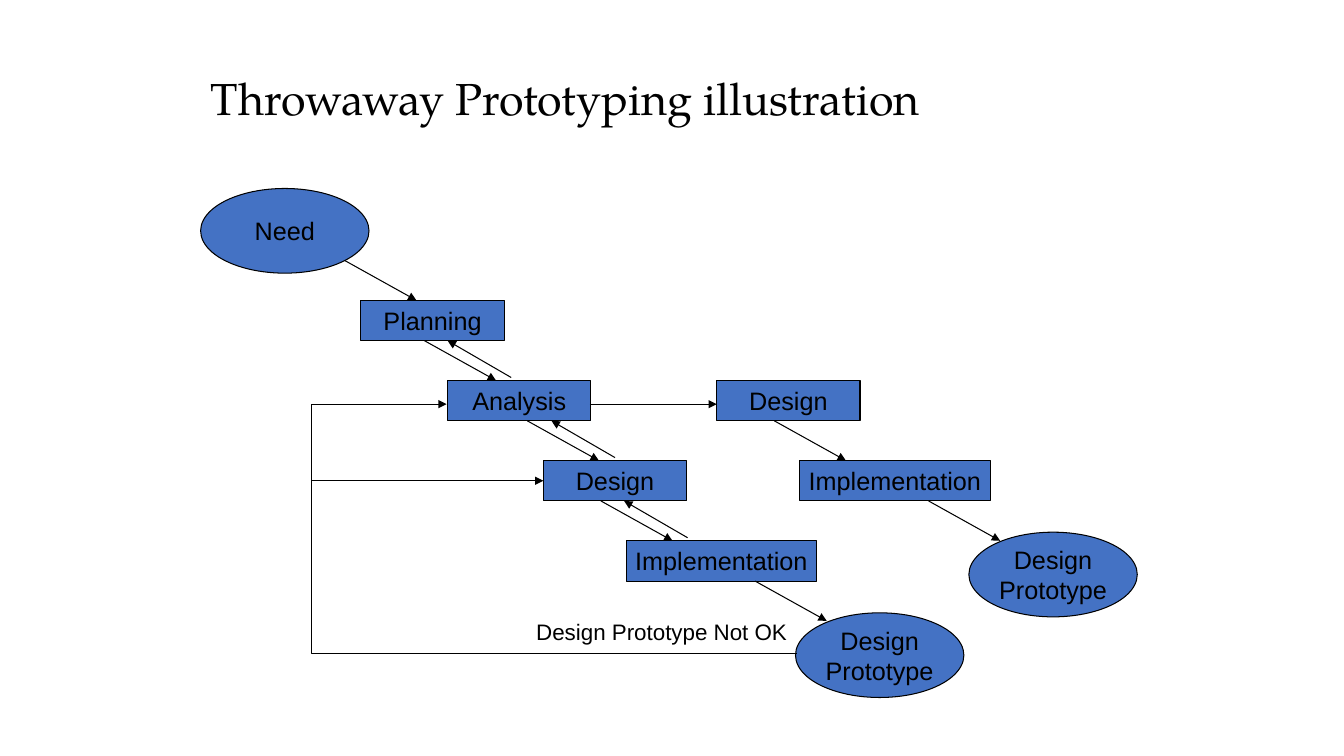
"""Builds the throwaway prototyping slide: two staircases of phases with a feedback loop."""
from lxml import etree
from pptx import Presentation
from pptx.dml.color import RGBColor
from pptx.enum import shapes, text
from pptx.oxml import ns
from pptx.util import Inches, Pt

COLOURS = {"ink": "000000", "phase": "4472C4"}
TITLE = "Throwaway Prototyping illustration"
FEEDBACK = "Design Prototype Not OK"

# label, left, row, width
PHASES = [
    ("Planning", 3.58, 0, 1.42),
    ("Analysis", 4.44, 1, 1.42),
    ("Design", 5.39, 2, 1.42),
    ("Implementation", 6.21, 3, 1.89),
    ("Design", 7.11, 1, 1.42),
    ("Implementation", 7.93, 2, 1.89),
]
# label, left, top
ENDS = [
    ("Need", 1.99, 1.87),
    ("Design\nPrototype", 7.89, 6.08),
    ("Design\nPrototype", 9.61, 5.28),
]
# left end, row above the arrow
STEPS_DOWN = [(3.42, -1), (4.21, 0), (5.23, 1), (5.96, 2), (7.49, 3), (7.68, 1), (9.21, 2)]
STEPS_BACK = [(4.44, 0), (5.47, 1), (6.19, 2)]
LOOP = [(7.9, 6.48), (3.09, 6.48), (3.09, 4.01), (4.43, 4.01)]

FIRST_TOP, ROW_PITCH, PHASE_HEIGHT = 2.98, 0.795, 0.4
END_WIDTH, END_HEIGHT = 1.67, 0.84


def ink(name):
    return RGBColor.from_string(COLOURS[name])


def row_top(row):
    return FIRST_TOP + row * ROW_PITCH


def row_bottom(row):
    return row_top(row) + PHASE_HEIGHT


def write(part, words, size, font, align, **frame_format):
    frame = part.text_frame
    frame.text = words
    for key, value in frame_format.items():
        setattr(frame, key, value)
    for paragraph in frame.paragraphs:
        paragraph.alignment = align
        for key, value in {"size": Pt(size), "name": font}.items():
            setattr(paragraph.font, key, value)
        paragraph.font.color.rgb = ink("ink")


def outline(part, arrow=False):
    part.line.color.rgb = ink("ink")
    part.line.width = Pt(0.75)
    if arrow:
        etree.SubElement(part.line._get_or_add_ln(), ns.qn("a:tailEnd"), type="triangle")


def add_node(slide, kind, label, *box):
    node = slide.shapes.add_shape(kind, *map(Inches, box))
    node.shadow.inherit = False
    node.fill.solid()
    node.fill.fore_color.rgb = ink("phase")
    outline(node)
    write(node, label, 18, "Arial", text.PP_ALIGN.CENTER,
          word_wrap=False, vertical_anchor=text.MSO_ANCHOR.MIDDLE)
    return node


def add_arrow(slide, *ends):
    arrow = slide.shapes.add_connector(shapes.MSO_CONNECTOR.STRAIGHT, *map(Inches, ends))
    outline(arrow, arrow=True)
    etree.SubElement(arrow._element.spPr, ns.qn("a:effectLst"))
    return arrow


def main():
    deck = Presentation()
    deck.slide_width, deck.slide_height = Inches(13.33), Inches(7.5)
    slide = deck.slides.add_slide(deck.slide_layouts[5])

    title = slide.shapes.title
    for key, value in {"left": 1.99, "top": 0.68, "width": 9.29, "height": 0.65}.items():
        setattr(title, key, Inches(value))
    write(title, TITLE, 32, "TeX Gyre Pagella", text.PP_ALIGN.LEFT, word_wrap=True,
          vertical_anchor=text.MSO_ANCHOR.MIDDLE, auto_size=text.MSO_AUTO_SIZE.NONE)
    title.text_frame.paragraphs[0].line_spacing = 0.9

    for label, left, top in ENDS:
        add_node(slide, shapes.MSO_SHAPE.OVAL, label, left, top, END_WIDTH, END_HEIGHT)
    phases = [add_node(slide, shapes.MSO_SHAPE.RECTANGLE, label, left, row_top(row),
                       width, PHASE_HEIGHT)
              for label, left, row, width in PHASES]

    for left, row in STEPS_DOWN:
        add_arrow(slide, left, row_bottom(row), left + 0.71, row_top(row + 1))
    for left, row in STEPS_BACK:
        add_arrow(slide, left + 0.63, row_top(row + 1) - 0.03, left, row_bottom(row))
    add_arrow(slide, 5.85, 4.01, 7.11, 4.01)
    redesign = add_arrow(slide, 3.09, 4.77, 5.39, 4.77)
    redesign.end_connect(phases[2], 1)

    start, *corners = [(Inches(x), Inches(y)) for x, y in LOOP]
    builder = slide.shapes.build_freeform(*start)
    builder.add_line_segments(corners, close=False)
    loop = builder.convert_to_shape()
    loop.shadow.inherit = False
    loop.fill.background()
    outline(loop, arrow=True)

    feedback = slide.shapes.add_textbox(*map(Inches, (5.22, 6.08, 2.7, 0.37)))
    write(feedback, FEEDBACK, 16, "Arial", text.PP_ALIGN.LEFT, word_wrap=False,
          auto_size=text.MSO_AUTO_SIZE.SHAPE_TO_FIT_TEXT)

    deck.save("out.pptx")


if __name__ == "__main__":
    main()
